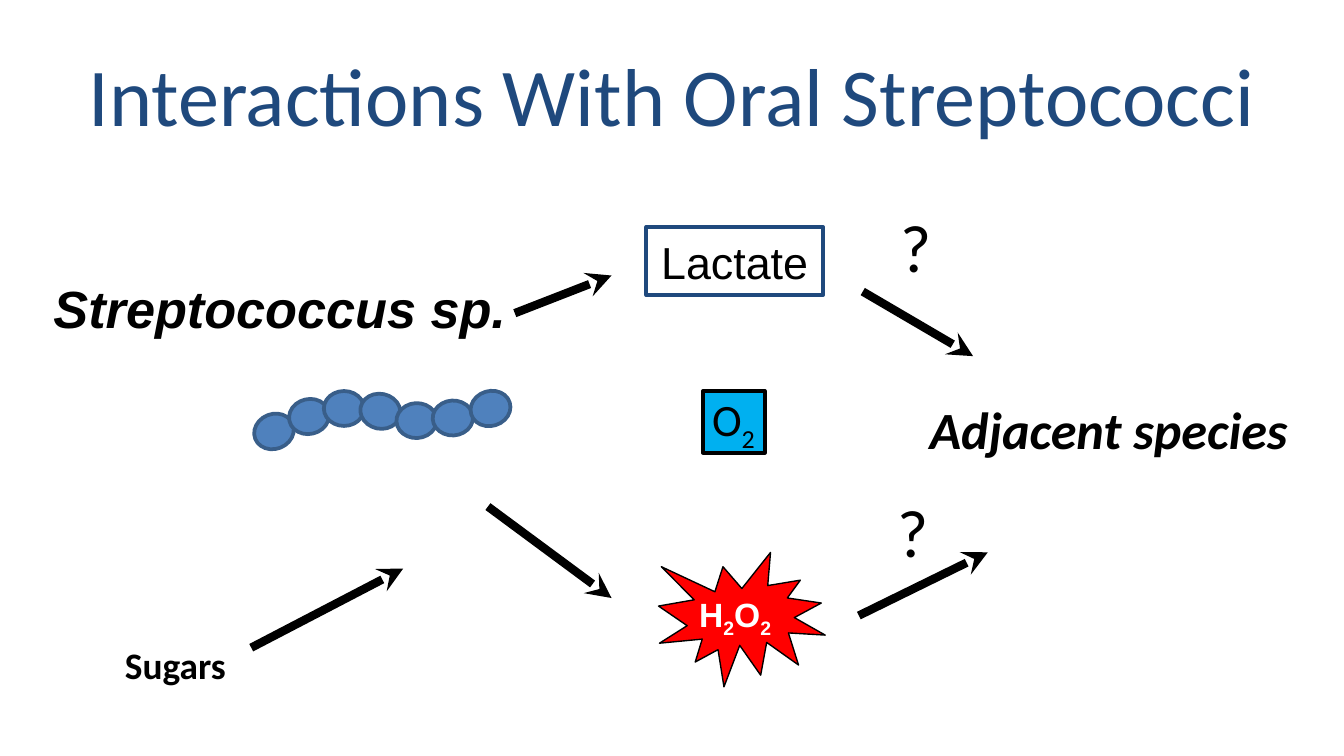
"""Builds a slide on the interactions of oral streptococci with adjacent species."""
import itertools

import pptx
import pptx.dml.color
import pptx.enum.shapes
import pptx.enum.text
import pptx.oxml
import pptx.oxml.ns
import pptx.util

Pt = pptx.util.Pt
RGB = pptx.dml.color.RGBColor.from_string
Kind = pptx.enum.shapes.MSO_SHAPE
Align = pptx.enum.text.PP_ALIGN
COLORS = {
    "navy": "1F497D", "cell": "4F81BD", "cell_edge": "395E89",
    "red": "FF0000", "sky": "00B0F0", "black": "000000", "white": "FFFFFF",
}


def add_shape(parent, kind, bounds, fill, line, weight):
    shape = parent.shapes.add_shape(kind, *map(Pt, bounds))
    shape.shadow.inherit = False
    if fill:
        shape.fill.solid()
        shape.fill.fore_color.rgb = RGB(COLORS[fill])
    else:
        shape.fill.background()
    shape.line.color.rgb = RGB(COLORS[line])
    shape.line.width = Pt(weight)
    return shape


def write(box, text, size, font, color="black", bold=False, italic=False, align=Align.LEFT):
    box.text_frame.word_wrap = True
    para = box.text_frame.paragraphs[0]
    para.alignment = align
    for is_digit, letters in itertools.groupby(text, str.isdigit):
        span = para.add_run()
        span.text = "".join(letters)
        span.font.size = Pt(size)
        span.font.name = font
        span.font.bold = bold
        span.font.italic = italic
        span.font.color.rgb = RGB(COLORS[color])
        if is_digit:
            span.font._element.set("baseline", "-25000")


deck = pptx.Presentation()
deck.slide_width, deck.slide_height = Pt(720), Pt(405)
page = deck.slides.add_slide(deck.slide_layouts[6])

title = page.shapes.add_textbox(Pt(36), Pt(16.5), Pt(648), Pt(67.5))
title.text_frame.vertical_anchor = pptx.enum.text.MSO_ANCHOR.MIDDLE
write(title, "Interactions With Oral Streptococci", 44, "Calibri", "navy", align=Align.CENTER)

chain = page.shapes.add_group_shape()
cells = [
    (136, 221.8, 338.3), (154.8, 213.8, 346.8), (173.5, 209.5, 0), (193, 211, 12),
    (212.4, 216, 357), (231.8, 214.6, 357), (252, 209.5, 342.9),
]
for left, top, angle in cells:
    cell = add_shape(chain, Kind.OVAL, (left, top, 21.6, 18.7), "cell", "cell_edge", 2)
    cell.rotation = angle

peroxide = page.shapes.add_group_shape()
add_shape(peroxide, Kind.EXPLOSION1, (352.8, 296, 89.3, 72), "red", "black", 0.75)
peroxide_label = peroxide.shapes.add_textbox(Pt(366.5), Pt(314.6), Pt(54.7), Pt(29))
write(peroxide_label, "H2O2", 18, "Arial", "white", bold=True, align=Align.CENTER)

lactate = add_shape(page, Kind.RECTANGLE, (346.3, 121.7, 94.5, 36.3), None, "navy", 2.25)
write(lactate, "Lactate", 24, "Arial", align=Align.CENTER)
add_shape(page, Kind.RECTANGLE, (376.6, 209.5, 33.1, 33.1), "sky", "black", 2)

arrows = [
    (275.8, 167.8, 327.6, 147.6), (462.2, 156.2, 521.3, 190.8),
    (261.4, 271.4, 327.6, 320.4), (460.1, 329.8, 529.2, 295.9),
    (134.6, 347, 216, 304.6),
]
for ends in arrows:
    arrow = page.shapes.add_connector(pptx.enum.shapes.MSO_CONNECTOR.STRAIGHT, *map(Pt, ends))
    arrow.line.color.rgb = RGB(COLORS["black"])
    arrow.line.width = Pt(4.5)
    head = pptx.oxml.parse_xml(f'<a:tailEnd {pptx.oxml.ns.nsdecls("a")} type="stealth"/>')
    arrow.line._get_or_add_ln().append(head)
    effects = pptx.oxml.parse_xml(f'<a:effectLst {pptx.oxml.ns.nsdecls("a")}/>')
    arrow._element.spPr.append(effects)

labels = [
    ("Streptococcus sp.", (21.6, 144.7, 260, 41), 28, "Arial", True, True, Align.LEFT),
    ("?", (475.2, 106.6, 45.4, 51), 36, "Calibri", False, False, Align.LEFT),
    ("?", (473.8, 259.2, 63.4, 51), 36, "Calibri", False, False, Align.LEFT),
    ("O2", (374.4, 206.6, 39, 36), 24, "Calibri", False, False, Align.LEFT),
    ("Adjacent species", (483, 209.5, 221.8, 41), 28, "Calibri", True, True, Align.CENTER),
    ("Sugars", (59.8, 340.6, 69.2, 31.7), 20, "Calibri", True, False, Align.LEFT),
]
for text, bounds, size, font, bold, italic, align in labels:
    box = page.shapes.add_textbox(*map(Pt, bounds))
    write(box, text, size, font, bold=bold, italic=italic, align=align)

deck.save("out.pptx")
